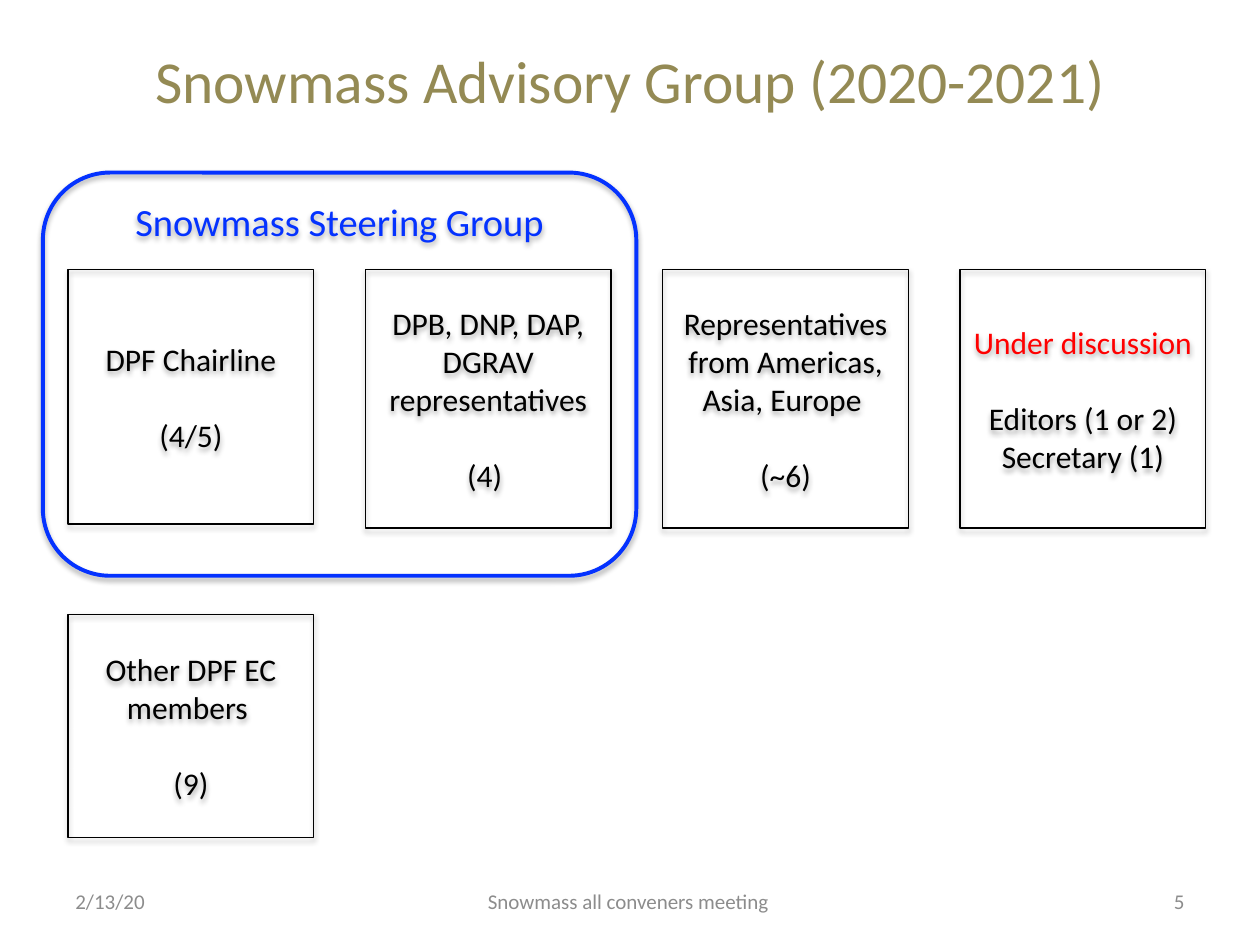
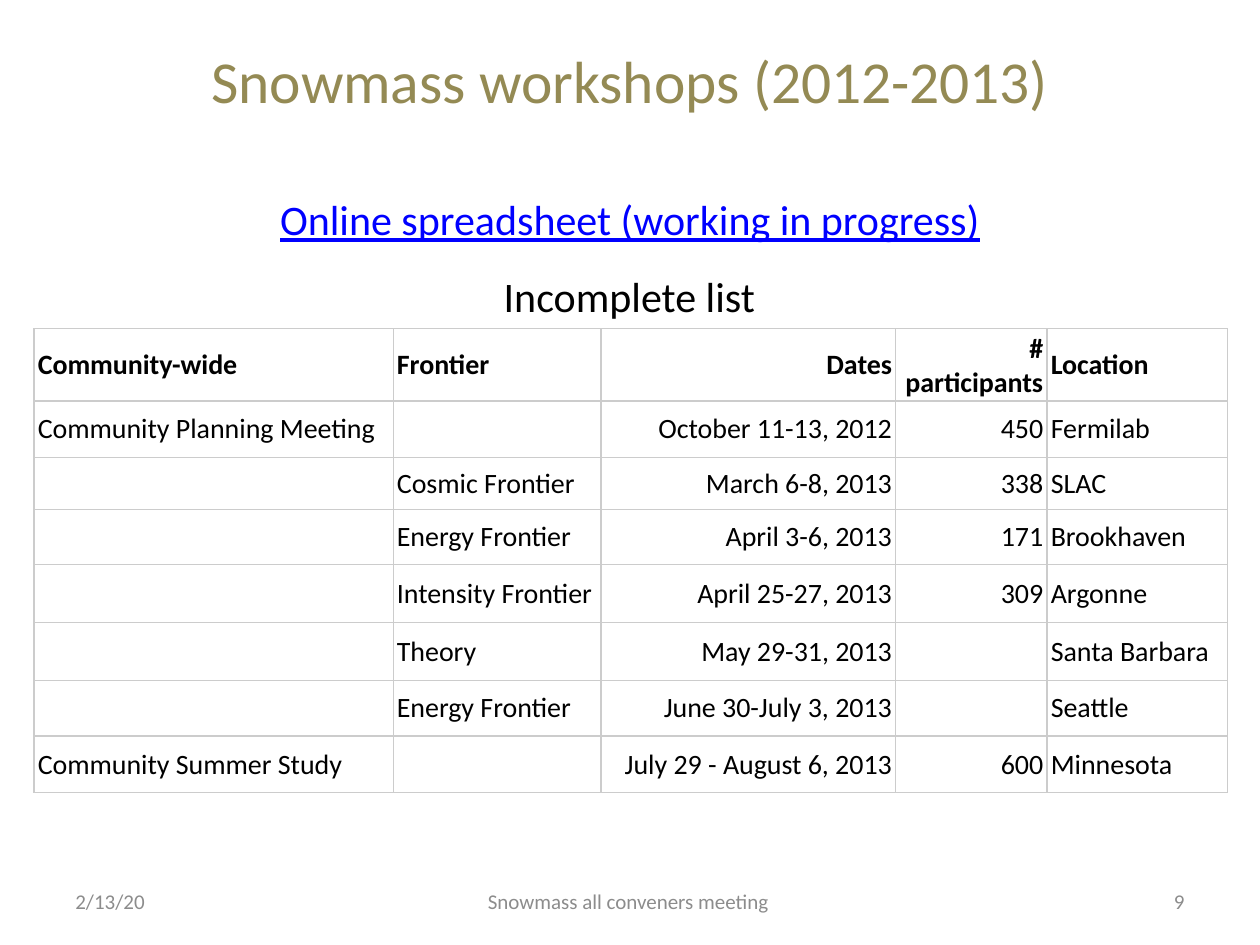
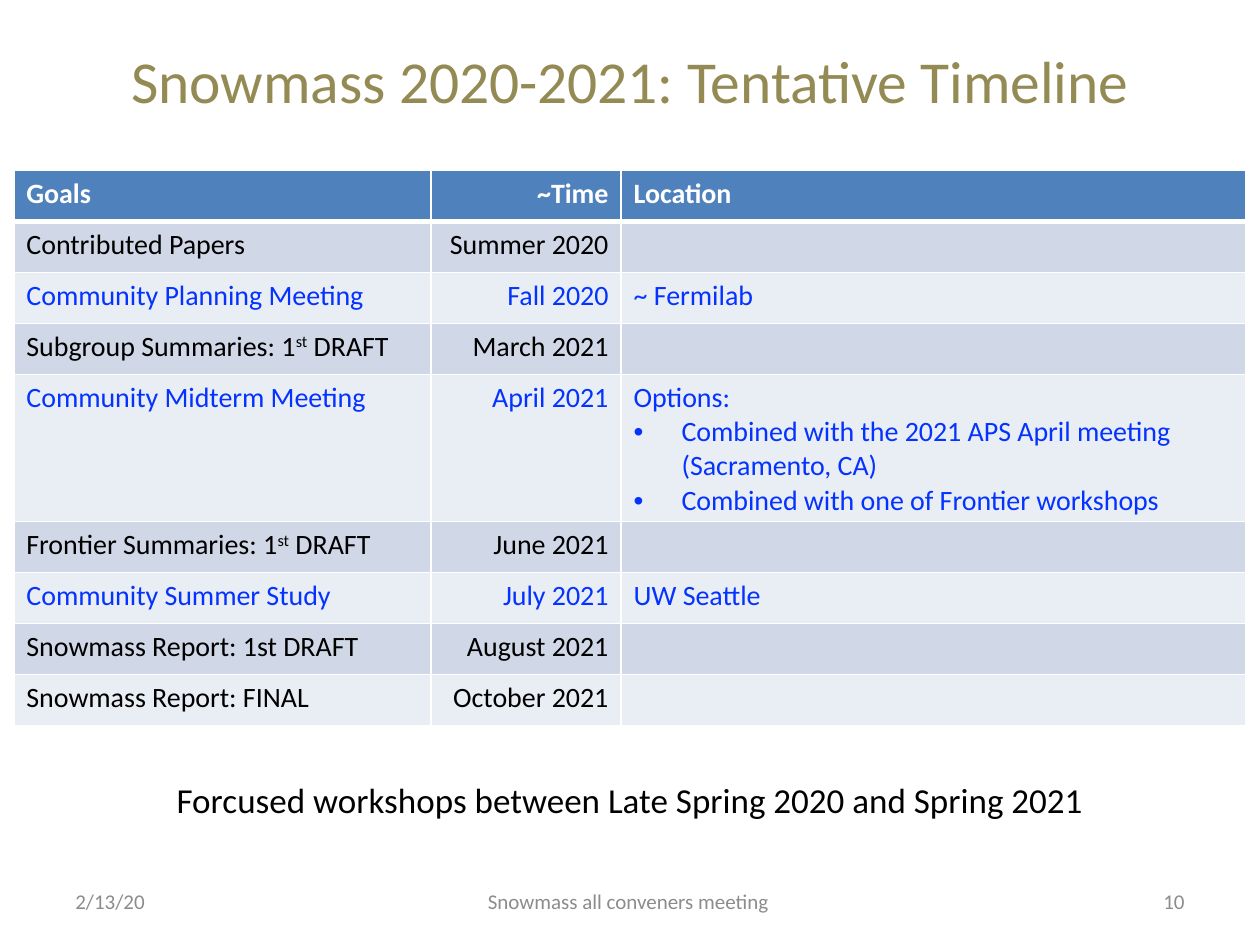
from dataclasses import dataclass

from lxml import etree
from pptx import Presentation
from pptx.dml.color import RGBColor
from pptx.enum import shapes, text
from pptx.oxml import ns
from pptx.util import Inches, Pt

LEFT, CENTER, RIGHT = text.PP_ALIGN.LEFT, text.PP_ALIGN.CENTER, text.PP_ALIGN.RIGHT
TOP, MIDDLE = text.MSO_ANCHOR.TOP, text.MSO_ANCHOR.MIDDLE


@dataclass(frozen=True)
class Theme:
    """Colours, font and type sizes of the deck."""
    font: str = "Calibri"
    title: str = "948A54"
    ink: str = "000000"
    white: str = "FFFFFF"
    footer: str = "8C8C8C"
    accent: str = "0432FF"
    alert: str = "FF0000"
    link: str = "0000FF"
    rule: str = "CCCCCC"
    header: str = "4F81BD"
    bands: tuple = ("D0D8E8", "E9EDF4")
    title_size: int = 34
    lead_size: int = 24
    group_size: int = 22
    note_size: int = 20
    box_size: int = 18
    table_size: int = 16
    footer_size: int = 12
    blank_line: int = 22


THEME = Theme()
DATE = "2/13/20"
MEETING = "Snowmass all conveners meeting "

WORKSHOPS = [
    ("Community-wide", "Frontier", "Dates", "# participants", "Location"),
    ("Community Planning Meeting", "", "October 11-13, 2012", "450", "Fermilab"),
    ("", "Cosmic Frontier", "March 6-8, 2013", "338", "SLAC"),
    ("", "Energy Frontier", "April 3-6, 2013", "171", "Brookhaven"),
    ("", "Intensity Frontier", "April 25-27, 2013", "309", "Argonne"),
    ("", "Theory", "May 29-31, 2013", "", "Santa Barbara"),
    ("", "Energy Frontier", "June 30-July 3, 2013", "", "Seattle"),
    ("Community Summer Study", "", "July 29 - August 6, 2013", "600", "Minnesota"),
]

TIMELINE = [
    ("Goals", "~Time", "Location"),
    ("Contributed Papers", "Summer 2020", ""),
    ("Community Planning Meeting", "Fall 2020", "~ Fermilab"),
    ("Subgroup Summaries: 1^st^ DRAFT", "March 2021", ""),
    ("Community Midterm Meeting", "April 2021", "Options:"),
    ("Frontier Summaries: 1^st^ DRAFT", "June 2021", ""),
    ("Community Summer Study", "July 2021", "UW Seattle"),
    ("Snowmass Report: 1st DRAFT", "August 2021", ""),
    ("Snowmass Report: FINAL", "October 2021", ""),
]
MIDTERM_OPTIONS = [
    "Combined with the 2021 APS April meeting (Sacramento, CA)",
    "Combined with one of Frontier workshops",
]


def inches(box):
    """Turn a box of plain numbers into lengths."""
    return [Inches(value) for value in box]


def write(frame, content, size=THEME.box_size, color=THEME.ink, bold=False,
          underline=False, align=LEFT, gap=0, bullet=False):
    """Add one paragraph to a frame; parts between carets are superscript."""
    paragraph = frame.add_paragraph() if frame.text else frame.paragraphs[0]
    paragraph.alignment = align
    if gap:
        paragraph.space_before = Pt(gap)
    if bullet:
        properties = paragraph._p.get_or_add_pPr()
        properties.set("marL", str(Inches(0.38)))
        properties.set("indent", str(-Inches(0.38)))
        etree.SubElement(properties, ns.qn("a:buFont"), typeface="Arial")
        etree.SubElement(properties, ns.qn("a:buChar"), char="•")
    for index, part in enumerate(content.split("^")):
        run = paragraph.add_run()
        run.text = part
        font = run.font
        font.name, font.size, font.bold = THEME.font, Pt(size), bold
        font.underline = underline
        font.color.rgb = RGBColor.from_string(color)
        if index % 2:
            run._r.get_or_add_rPr().set("baseline", "30000")


def add_text(slide, box, content, anchor=TOP, wrap=True, **text_format):
    """Place one line of text in a box."""
    frame = slide.shapes.add_textbox(*inches(box)).text_frame
    frame.word_wrap, frame.vertical_anchor = wrap, anchor
    write(frame, content, **text_format)


def add_base(presentation, title, number):
    """Add a slide with its title and footer."""
    slide = presentation.slides.add_slide(presentation.slide_layouts[5])
    heading = slide.shapes.title
    heading.left, heading.top, heading.width, heading.height = inches((0, 0.18, 10, 0.91))
    heading.text_frame.vertical_anchor = MIDDLE
    write(heading.text_frame, title, size=THEME.title_size, color=THEME.title, align=CENTER)
    footers = [(0.5, 2.33, DATE, LEFT), (3.42, 3.17, MEETING, CENTER),
               (7.17, 2.33, str(number), RIGHT)]
    for left, width, content, align in footers:
        add_text(slide, (left, 6.95, width, 0.4), content, anchor=MIDDLE,
                 size=THEME.footer_size, color=THEME.footer, align=align)
    return slide


def add_outline(slide, kind, box, color, weight, anchor=MIDDLE):
    """Draw an unfilled shape with a soft shadow and return its text frame."""
    shape = slide.shapes.add_shape(kind, *inches(box))
    shape.fill.background()
    shape.line.color.rgb = RGBColor.from_string(color)
    shape.line.width = Pt(weight)
    shape.shadow.inherit = False
    effects = shape._element.spPr.find(ns.qn("a:effectLst"))
    shadow = etree.SubElement(effects, ns.qn("a:outerShdw"), blurRad=str(Pt(3.1)),
                              dist=str(Pt(1.8)), dir="5400000", rotWithShape="0")
    tint = etree.SubElement(shadow, ns.qn("a:srgbClr"), val=THEME.ink)
    etree.SubElement(tint, ns.qn("a:alpha"), val="35000")
    shape.text_frame.word_wrap = True
    shape.text_frame.vertical_anchor = anchor
    return shape.text_frame


def add_member_boxes(slide, left, top):
    """Lay out the member boxes on a grid and frame the steering group."""
    gap = {"gap": THEME.blank_line}
    members = [
        (0, 0, 2.02, [("DPF Chairline", {}), ("(4/5)", gap)]),
        (1, 0, 2.05, [("DPB, DNP, DAP, DGRAV representatives", {}), ("(4) ", gap)]),
        (0, 2.74, 1.77, [("Other DPF EC members ", {}), ("(9)", gap)]),
        (2, 0, 2.05, [("Representatives from Americas, Asia, Europe ", {}), ("(~6)", gap)]),
        (3, 0, 2.05, [("Under discussion", {"color": THEME.alert}),
                      ("Editors (1 or 2)", gap), ("Secretary (1)", {})]),
    ]
    for column, drop, height, lines in members:
        box = (left + 2.36 * column, top + drop, 1.95, height)
        frame = add_outline(slide, shapes.MSO_SHAPE.RECTANGLE, box, THEME.ink, 0.75)
        for content, extra in lines:
            write(frame, content, align=CENTER, **extra)
    frame = add_outline(slide, shapes.MSO_SHAPE.ROUNDED_RECTANGLE,
                        (left - 0.2, top - 0.77, 4.71, 3.2), THEME.accent, 2.25, TOP)
    write(frame, "Snowmass Steering Group", size=THEME.group_size,
          color=THEME.accent, align=CENTER)


def set_borders(cell, color, weight, bottom):
    """Draw the four borders of a cell."""
    properties = cell._tc.get_or_add_tcPr()
    for side in "LRTB":
        width = bottom if side == "B" else weight
        line = etree.SubElement(properties, ns.qn(f"a:ln{side}"), w=str(Pt(width)))
        fill = etree.SubElement(line, ns.qn("a:solidFill"))
        etree.SubElement(fill, ns.qn("a:srgbClr"), val=color)


def add_grid(slide, box, widths, heights, rows, right_columns, border, weight,
             header_rule, margins=(0.1, 0.05), anchor=TOP,
             fill_of=lambda row: None, color_of=lambda row: THEME.ink):
    """Build a table whose fills and text colours follow rules by row."""
    table = slide.shapes.add_table(len(rows), len(widths), *inches(box)).table
    table.first_row = table.horz_banding = False
    for column, width in zip(table.columns, widths):
        column.width = Inches(width)
    for row_index, (row, height) in enumerate(zip(rows, heights)):
        table.rows[row_index].height = Inches(height)
        for column_index, content in enumerate(row):
            cell = table.cell(row_index, column_index)
            cell.margin_left = cell.margin_right = Inches(margins[0])
            cell.margin_top = cell.margin_bottom = Inches(margins[1])
            cell.vertical_anchor = anchor
            set_borders(cell, border, weight, weight if row_index else header_rule)
            fill = fill_of(row_index)
            if fill:
                cell.fill.solid()
                cell.fill.fore_color.rgb = RGBColor.from_string(fill)
            else:
                cell.fill.background()
            if content:
                write(cell.text_frame, content, size=THEME.table_size, bold=row_index == 0,
                      color=color_of(row_index),
                      align=RIGHT if column_index in right_columns else LEFT)
    return table


def add_workshop_table(slide, left, top):
    """Add the list of past workshops."""
    add_grid(slide, (left, top, 9.46, 3.67), [2.85, 1.65, 2.34, 1.2, 1.43],
             [0.51, 0.45, 0.41, 0.44, 0.46, 0.46, 0.44, 0.45], WORKSHOPS, (2, 3),
             THEME.rule, 0.75, 0.75, margins=(0.03, 0.02), anchor=MIDDLE)


def timeline_fill(row):
    """Give the fill of a timeline row."""
    return THEME.bands[(row - 1) % 2] if row else THEME.header


def timeline_color(row):
    """Give the text colour of a timeline row; community events stand out."""
    if row == 0:
        return THEME.white
    return THEME.accent if TIMELINE[row][0].startswith("Community") else THEME.ink


def add_timeline_table(slide, left, top):
    """Add the timeline with the options for the midterm meeting."""
    count, height = len(TIMELINE), 3.65
    table = add_grid(slide, (left, top, 9.78, height), [3.31, 1.51, 4.96],
                     [height / count] * count, TIMELINE, (1,), THEME.white, 1, 3,
                     fill_of=timeline_fill, color_of=timeline_color)
    for option in MIDTERM_OPTIONS:
        write(table.cell(4, 2).text_frame, option, size=THEME.table_size,
              color=THEME.accent, bullet=True)


def main():
    """Build the deck."""
    presentation = Presentation()
    presentation.slide_width, presentation.slide_height = Inches(10), Inches(7.5)

    advisory = add_base(presentation, "Snowmass Advisory Group (2020-2021)", 5)
    add_member_boxes(advisory, 0.54, 2.14)

    workshops = add_base(presentation, "Snowmass workshops (2012-2013)", 9)
    add_workshop_table(workshops, 0.27, 2.61)
    add_text(workshops, (0, 1.49, 10, 0.5), "Online spreadsheet (working in progress)",
             size=THEME.lead_size, color=THEME.link, underline=True, align=CENTER)
    add_text(workshops, (3.89, 2.1, 2.21, 0.5), "Incomplete list", wrap=False,
             size=THEME.lead_size, align=CENTER)

    timeline = add_base(presentation, "Snowmass 2020-2021: Tentative Timeline", 10)
    add_timeline_table(timeline, 0.11, 1.35)
    add_text(timeline, (1.27, 6.13, 7.46, 0.44),
             "Forcused workshops between Late Spring 2020 and Spring 2021",
             wrap=False, size=THEME.note_size, align=CENTER)

    presentation.save("out.pptx")


if __name__ == "__main__":
    main()
